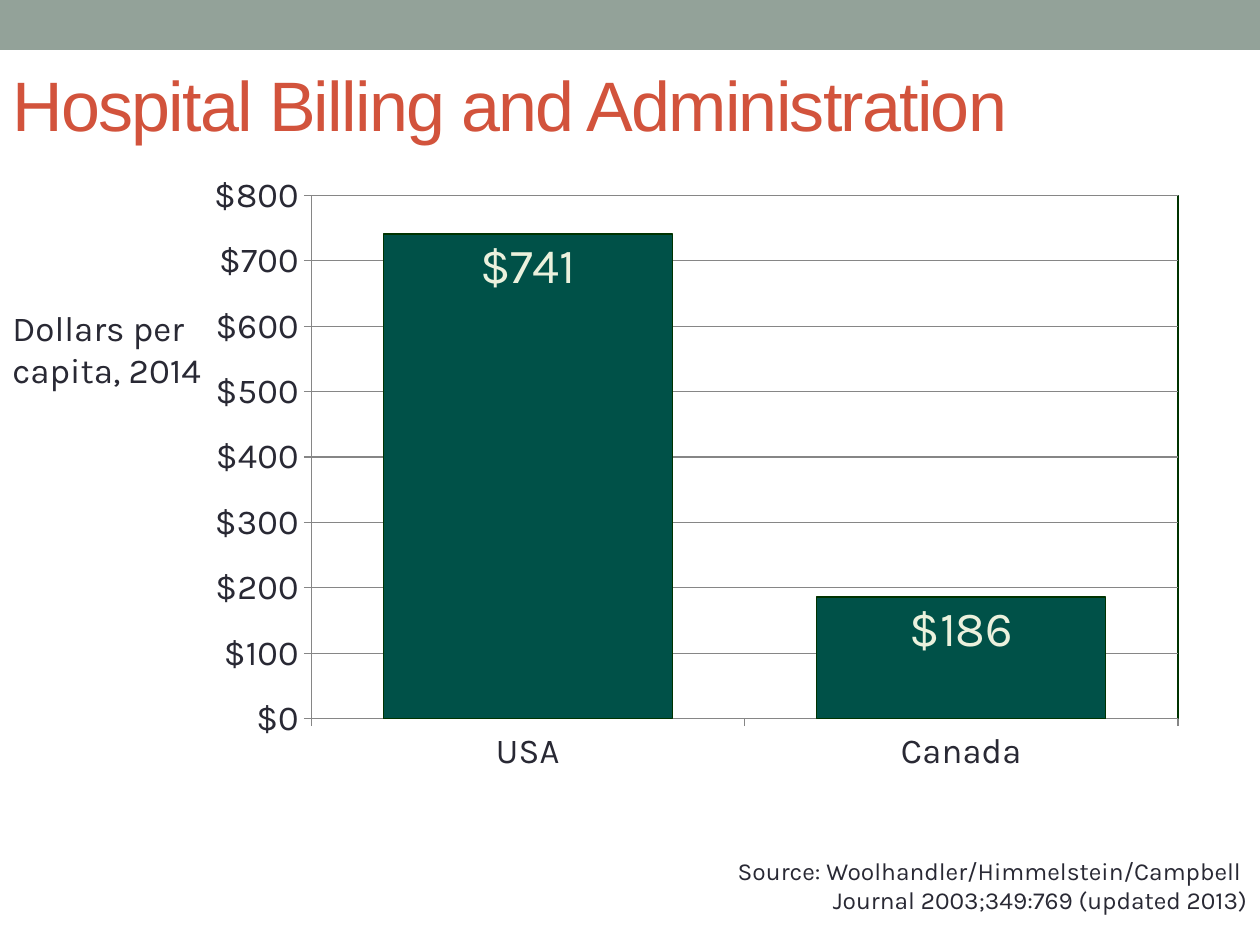
from lxml.etree import SubElement
from pptx import Presentation
from pptx.chart.data import CategoryChartData
from pptx.dml.color import RGBColor
from pptx.enum.chart import XL_CHART_TYPE, XL_LABEL_POSITION, XL_TICK_MARK
from pptx.enum.shapes import MSO_SHAPE
from pptx.enum.text import MSO_ANCHOR, MSO_AUTO_SIZE, PP_ALIGN
from pptx.oxml import parse_xml
from pptx.oxml.ns import nsdecls, qn
from pptx.util import Pt

EMU_PER_PX = 914400 / 126
COLORS = {
    "band": "93A299",
    "title": "D2533C",
    "text": "292934",
    "bar": "005148",
    "bar_line": "003300",
    "label": "EBF1DD",
    "grid": "868686",
    "background": "FFFFFF",
}
DOLLARS = '"$"#,##0'
PLOT_LAYOUT = {"x": 0.083, "y": 0.045, "w": 0.87, "h": 0.799}


def px(length):
    """Turn px into whole EMU."""
    return round(length * EMU_PER_PX)


def color(name):
    """Look up a palette colour."""
    return RGBColor.from_string(COLORS[name])


def format_font(font, size, name="Karla", fill="text"):
    """Set the typeface, size and colour of a font."""
    font.name = name
    font.size = Pt(size)
    font.bold = False
    font.color.rgb = color(fill)


def format_line(line, fill):
    """Give a line its colour and the common width."""
    line.color.rgb = color(fill)
    line.width = Pt(0.75)


def write_text(shape, lines, size, name="Karla", fill="text", align=PP_ALIGN.LEFT,
               anchor=MSO_ANCHOR.TOP, spacing=None):
    """Write formatted paragraphs into a shape."""
    frame = shape.text_frame
    frame.word_wrap = True
    frame.auto_size = MSO_AUTO_SIZE.NONE
    frame.vertical_anchor = anchor
    frame.text = "\n".join(lines)
    for paragraph in frame.paragraphs:
        paragraph.alignment = align
        for run in paragraph.runs:
            format_font(run.font, size, name, fill)
            if spacing is not None:
                run.font._element.set("spc", str(spacing * 100))


def add_band(slide, box):
    """Draw the plain band along the top."""
    band = slide.shapes.add_shape(MSO_SHAPE.RECTANGLE, *map(px, box))
    band.shadow.inherit = False
    band.fill.solid()
    band.fill.fore_color.rgb = color("band")
    band.line.fill.background()


def place_title(slide, box, text):
    """Move the title placeholder into its box and fill it."""
    title = slide.shapes.title
    title.left, title.top, title.width, title.height = map(px, box)
    write_text(title, [text], 40, name="Arial", fill="title",
               anchor=MSO_ANCHOR.MIDDLE, spacing=-1)


def add_note(slide, box, lines, size, **text_format):
    """Add a text box with the given lines."""
    write_text(slide.shapes.add_textbox(*map(px, box)), lines, size, **text_format)


def format_plot_area(plot_area):
    """Fix the inner plot layout, and set its fill and border."""
    layout = plot_area.find(qn("c:layout"))
    if layout is None:
        layout = plot_area.makeelement(qn("c:layout"))
        plot_area.insert(0, layout)
    manual = SubElement(layout, qn("c:manualLayout"))
    settings = {"layoutTarget": "inner", "xMode": "edge", "yMode": "edge", **PLOT_LAYOUT}
    for tag, value in settings.items():
        SubElement(manual, qn(f"c:{tag}")).set("val", str(value))
    plot_area.append(parse_xml(
        f'<c:spPr {nsdecls("c", "a")}>'
        f'<a:solidFill><a:srgbClr val="{COLORS["background"]}"/></a:solidFill>'
        f'<a:ln w="9525"><a:solidFill><a:srgbClr val="{COLORS["bar_line"]}"/>'
        '</a:solidFill></a:ln></c:spPr>'))


def add_cost_chart(slide, box):
    """Add the column chart of costs by country."""
    data = CategoryChartData(number_format=DOLLARS)
    data.categories = ["USA", "Canada"]
    data.add_series("Series 1", [741, 186])
    chart = slide.shapes.add_chart(
        XL_CHART_TYPE.COLUMN_CLUSTERED, *map(px, box), data).chart
    chart.has_legend = False
    chart.has_title = False
    format_font(chart.font, 18, name="Arial")
    format_plot_area(chart._chartSpace.chart.plotArea)

    for axis in (chart.category_axis, chart.value_axis):
        axis.major_tick_mark = XL_TICK_MARK.OUTSIDE
        format_font(axis.tick_labels.font, 20)
        format_line(axis.format.line, "grid")
    costs = chart.value_axis
    costs.minimum_scale, costs.maximum_scale, costs.major_unit = 0, 800, 100
    costs.tick_labels.number_format = DOLLARS
    costs.tick_labels.number_format_is_linked = False
    format_line(costs.major_gridlines.format.line, "grid")

    plot = chart.plots[0]
    plot.gap_width, plot.overlap = 50, -5
    plot.vary_by_categories = False
    series = plot.series[0]
    series.format.fill.solid()
    series.format.fill.fore_color.rgb = color("bar")
    format_line(series.format.line, "bar_line")
    labels = series.data_labels
    labels.show_value = True
    labels.position = XL_LABEL_POSITION.INSIDE_END
    labels.number_format = DOLLARS
    labels.number_format_is_linked = False
    format_font(labels.font, 28, fill="label")


def main():
    """Build and save the slide."""
    presentation = Presentation()
    presentation.slide_width, presentation.slide_height = px(1260), px(945)
    slide = presentation.slides.add_slide(presentation.slide_layouts[5])
    slide.background.fill.solid()
    slide.background.fill.fore_color.rgb = color("background")
    add_band(slide, (0, 0, 1260, 50))
    add_note(slide, (547, 849, 713, 72),
             ["Source: Woolhandler/Himmelstein/Campbell ", "Journal 2003;349:769 (updated 2013)"],
             14, align=PP_ALIGN.RIGHT, anchor=MSO_ANCHOR.MIDDLE)
    place_title(slide, (0, 24, 1260, 158), "Hospital Billing and Administration")
    add_note(slide, (0, 300, 215, 97), ["Dollars per capita, 2014"], 20)
    add_cost_chart(slide, (214, 166, 1011, 655))
    presentation.save("out.pptx")


if __name__ == "__main__":
    main()
